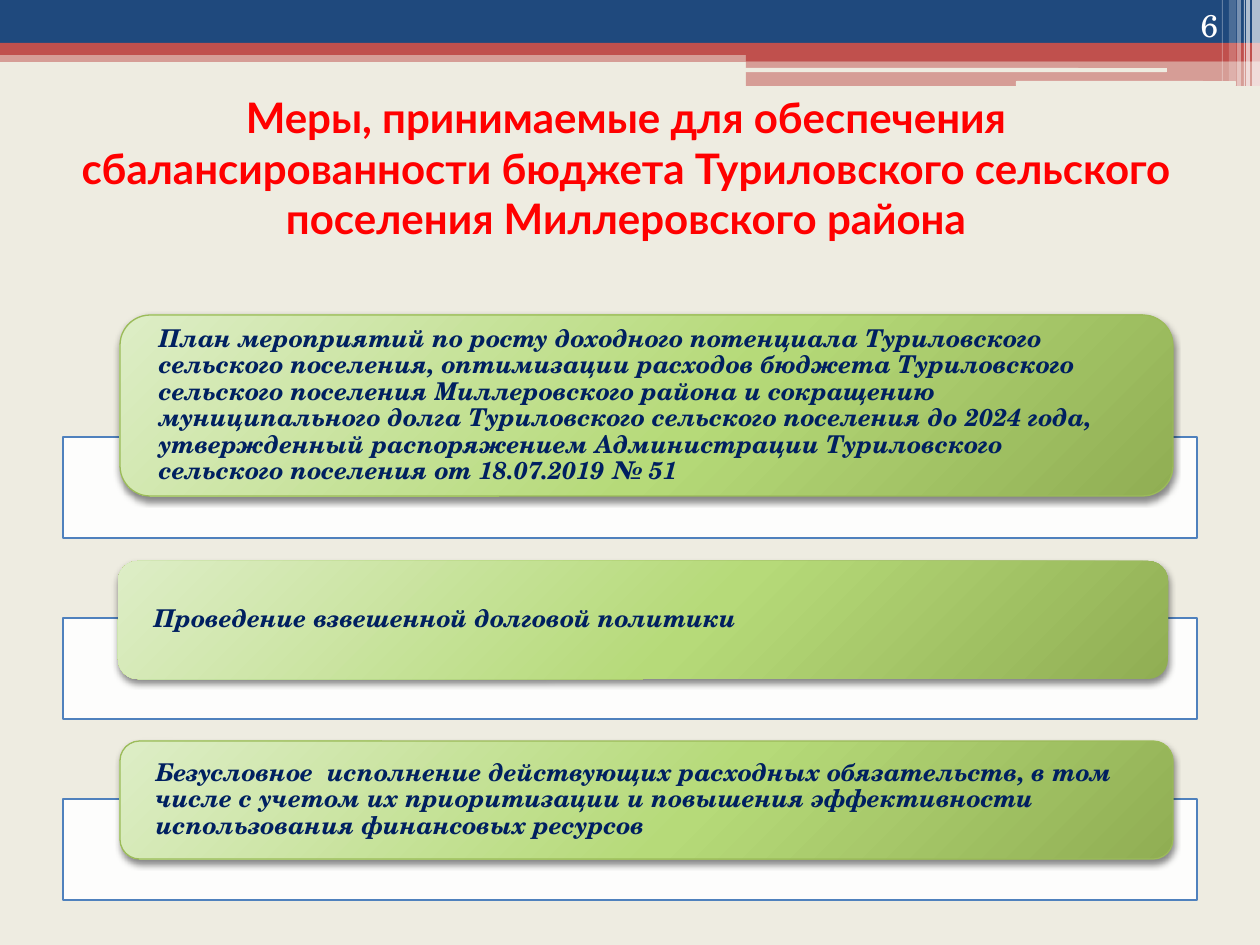
from lxml.etree import SubElement
from pptx import Presentation
from pptx.dml.color import RGBColor
from pptx.enum.shapes import MSO_SHAPE as Shape
from pptx.enum.text import MSO_ANCHOR as Anchor, PP_ALIGN as Align
from pptx.oxml import parse_xml
from pptx.oxml.ns import nsdecls, qn
from pptx.util import Pt

PX = 914400 / 126
CREAM = RGBColor(0xEE, 0xEC, 0xE1)
WHITE = RGBColor(0xFF, 0xFF, 0xFF)
BLUE = RGBColor(0x1F, 0x49, 0x7D)
BRICK = RGBColor(0xC0, 0x50, 0x4D)
FRAME = RGBColor(0x4F, 0x81, 0xBD)
GREEN = RGBColor(0x9B, 0xBB, 0x59)
NAVY = RGBColor(0x00, 0x20, 0x60)
RED = RGBColor(0xFF, 0x00, 0x00)
SERIF = "TeX Gyre Schola"

CARD_FILL = f"""<a:gradFill {nsdecls("a")} rotWithShape="1"><a:gsLst>
<a:gs pos="0"><a:srgbClr val="DDEDC6"/></a:gs>
<a:gs pos="55000"><a:srgbClr val="B6DA79"/></a:gs>
<a:gs pos="100000"><a:srgbClr val="90AE53"/></a:gs></a:gsLst>
<a:path path="circle"><a:fillToRect l="-40000" t="-90000" r="140000" b="190000"/></a:path>
</a:gradFill>"""
CARD_SHADOW = f"""<a:effectLst {nsdecls("a")}>
<a:outerShdw blurRad="50800" dist="25400" dir="5400000" rotWithShape="0">
<a:srgbClr val="000000"><a:alpha val="45000"/></a:srgbClr></a:outerShdw></a:effectLst>"""

deck = Presentation()
deck.slide_width, deck.slide_height = round(1260 * PX), round(945 * PX)
page = deck.slides.add_slide(deck.slide_layouts[5])
page.background.fill.solid()
page.background.fill.fore_color.rgb = CREAM


def add_block(left, top, width, height, color, opacity=100, kind=Shape.RECTANGLE):
    """Add a flat shape without line or shadow; lengths in px, opacity in percent."""
    block = page.shapes.add_shape(kind, *(round(v * PX) for v in (left, top, width, height)))
    block.shadow.inherit = False
    block.line.fill.background()
    block.fill.solid()
    block.fill.fore_color.rgb = color
    if opacity < 100:
        tint = block.fill._xPr.find(qn("a:solidFill"))[0]
        SubElement(tint, qn("a:alpha"), val=str(opacity * 1000))
    return block


def write(box, text, size, color, font=SERIF, bold=False, italic=False, align=Align.LEFT,
          anchor=Anchor.MIDDLE, margins=(13, 6, 13, 6), spacing=None):
    """Fill a shape with one formatted paragraph; margins are left, top, right, bottom px."""
    frame = box.text_frame
    frame.word_wrap = True
    frame.vertical_anchor = anchor
    (frame.margin_left, frame.margin_top,
     frame.margin_right, frame.margin_bottom) = (round(m * PX) for m in margins)
    para = frame.paragraphs[0]
    para.alignment = align
    para.line_spacing = spacing
    span = para.add_run()
    span.text = text
    span.font.name, span.font.size = font, Pt(size)
    span.font.bold, span.font.italic = bold, italic
    span.font.color.rgb = color


# Header bands
for left, top, width, height, color, opacity in (
    (0, 50, 1260, 12, BRICK, 50),
    (0, 0, 1260, 43, BLUE, 100),
    (0, 43, 1260, 12, BRICK, 100),
    (746, 49, 514, 12, BRICK, 100),
    (746, 61, 514, 25, BRICK, 50),
):
    add_block(left, top, width, height, color, opacity)
for left, top, width, height in ((745, 68, 422, 4), (1016, 81, 220, 5)):
    add_block(left, top, width, height, CREAM, kind=Shape.ROUNDED_RECTANGLE)

# Light stripes at the right edge
for left, width, height, opacity in (
    (1252, 8, 86, 65), (1246, 4, 86, 65), (1244, 1, 86, 60),
    (1237, 4, 86, 40), (1229, 7, 81, 20), (1222, 1, 81, 30),
):
    add_block(left, 0, width, height, WHITE, opacity)

title = page.shapes.title
title.left, title.top, title.width, title.height = (round(v * PX) for v in (59, 128, 1134, 129))
write(title, "Меры, принимаемые для обеспечения сбалансированности бюджета "
      "Туриловского сельского поселения Миллеровского района", 24, RED, font="Lato",
      bold=True, align=Align.CENTER, margins=(13, 0, 13, 50))

# Measures: a white frame behind each green card
measures = (
    (120, 315, 1053, 181, True,
     "План мероприятий по росту доходного потенциала Туриловского сельского поселения, "
     "оптимизации расходов бюджета Туриловского сельского поселения Миллеровского района "
     "и сокращению муниципального долга Туриловского сельского поселения до 2024 года, "
     "утвержденный распоряжением Администрации Туриловского сельского поселения "
     "от 18.07.2019 № 51"),
    (118, 561, 1050, 118, False, "Проведение взвешенной долговой политики"),
    (120, 741, 1053, 118, True,
     "Безусловное  исполнение действующих расходных обязательств, в том числе с учетом "
     "их приоритизации и повышения эффективности использования финансовых ресурсов"),
)
for row, (left, top, width, height, outlined, text) in enumerate(measures):
    frame_box = add_block(63, 437 + 181 * row, 1134, 101, WHITE, 90)
    frame_box.line.color.rgb = FRAME
    frame_box.line.width = Pt(1.5)

    card = add_block(left, top, width, height, GREEN, kind=Shape.ROUNDED_RECTANGLE)
    if outlined:
        card.line.color.rgb = GREEN
        card.line.width = Pt(0.75)
    properties = card._element.spPr
    properties.replace(properties.find(qn("a:solidFill")), parse_xml(CARD_FILL))
    properties.replace(properties.find(qn("a:effectLst")), parse_xml(CARD_SHADOW))
    write(card, text, 14, NAVY, bold=True, italic=True, margins=(30, 0, 30, 0), spacing=0.9)

number = page.shapes.add_textbox(*(round(v * PX) for v in (1126, 0, 105, 50)))
write(number, "6", 18, WHITE, align=Align.RIGHT, anchor=Anchor.BOTTOM)

deck.save("out.pptx")
